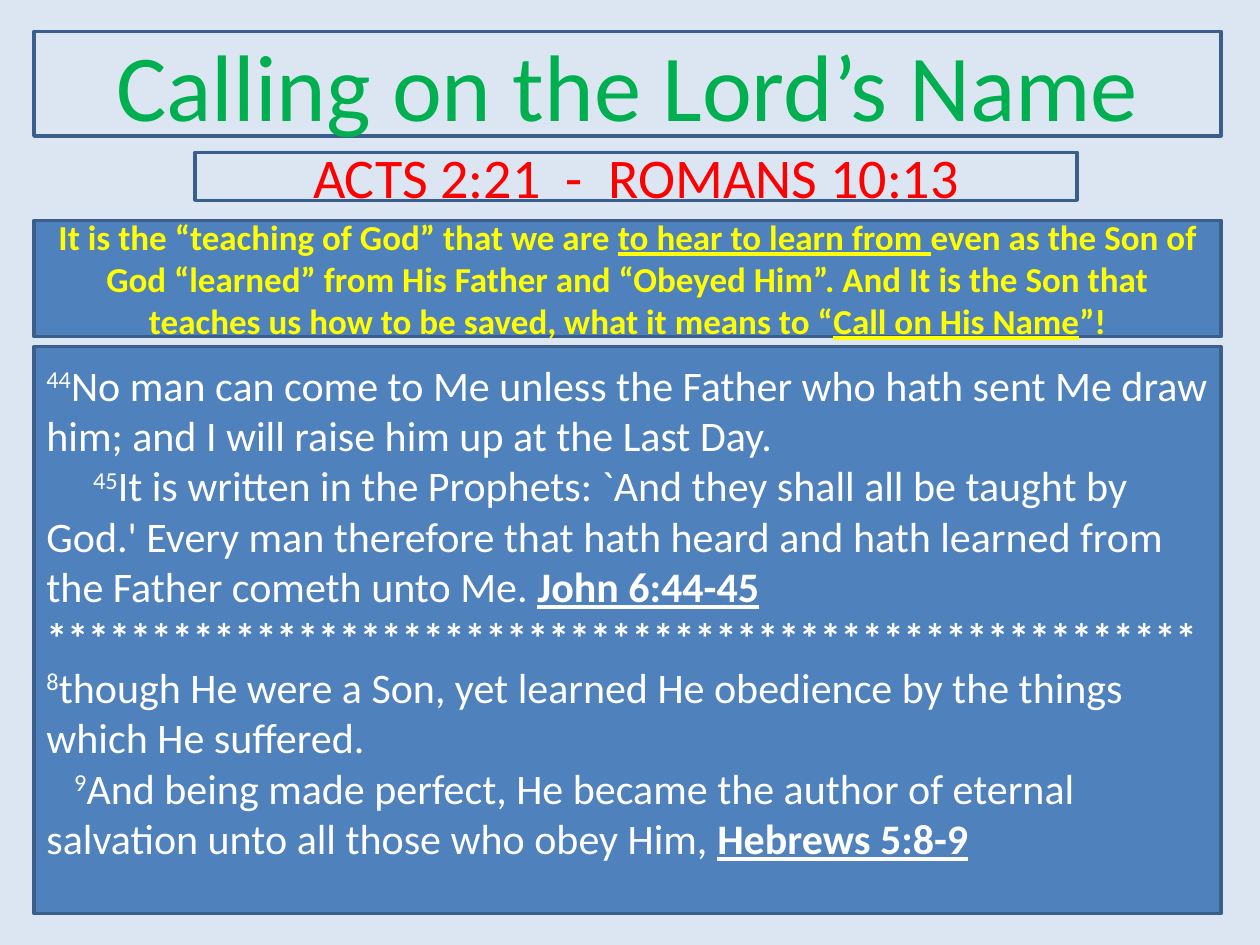
from pptx import Presentation
from pptx.dml.color import RGBColor
from pptx.enum.shapes import MSO_SHAPE
from pptx.enum.text import MSO_ANCHOR, PP_ALIGN
from pptx.util import Inches, Pt

RECTANGLE = MSO_SHAPE.RECTANGLE
TOP, MIDDLE = MSO_ANCHOR.TOP, MSO_ANCHOR.MIDDLE
LEFT, CENTER = PP_ALIGN.LEFT, PP_ALIGN.CENTER

PALE_BLUE = RGBColor(0xDC, 0xE6, 0xF2)
BLUE = RGBColor(0x4F, 0x81, 0xBD)
DARK_BLUE = RGBColor(0x3A, 0x5F, 0x8C)
GREEN = RGBColor(0x00, 0xB0, 0x50)
RED = RGBColor(0xFF, 0x00, 0x00)
YELLOW = RGBColor(0xFF, 0xFF, 0x00)
WHITE = RGBColor(0xFF, 0xFF, 0xFF)

FONT = "Calibri"
MARGIN, FULL_WIDTH = 0.27, 9.42

PLAIN, BOLD, UNDERLINED, REFERENCE, VERSE = "", "b", "u", "bu", "^"

TEACHING = [
    ("It is the “teaching of God” that we are ", BOLD),
    ("to hear to learn from ", REFERENCE),
    ("even as the Son of God “learned” from His Father and “Obeyed Him”. "
     "And It is the Son that teaches us how to be saved, what it means to “", BOLD),
    ("Call on His Name", REFERENCE),
    ("”!", BOLD),
]

# First-line indent in inches, then the spans of the paragraph
SCRIPTURE = [
    (0, [("44", VERSE),
         ("No man can come to Me unless the Father who hath sent Me draw him; "
          "and I will raise him up at the Last Day.", PLAIN)]),
    (0.37, [("45", VERSE),
            ("It is written in the Prophets: `And they shall all be taught by God.' "
             "Every man therefore that hath heard and hath learned from the Father "
             "cometh unto Me. ", PLAIN),
            ("John 6:44-45", REFERENCE)]),
    (0, [("*" * 55, BOLD)]),
    (0, [("8", VERSE),
         ("though He were a Son, yet learned He obedience by the things "
          "which He suffered.", PLAIN)]),
    (0.22, [("9", VERSE),
            ("And being made perfect, He became the author of eternal salvation "
             "unto all those who obey Him, ", PLAIN),
            ("Hebrews 5:8-9", REFERENCE)]),
]


def add_box(page, left, top, width, height, fill=None, anchor=MIDDLE):
    box = page.shapes.add_shape(
        RECTANGLE, Inches(left), Inches(top), Inches(width), Inches(height))
    box.shadow.inherit = False
    if fill is None:
        box.fill.background()
    else:
        box.fill.solid()
        box.fill.fore_color.rgb = fill
    box.line.color.rgb = DARK_BLUE
    box.line.width = Pt(2)
    box.text_frame.word_wrap = True
    box.text_frame.vertical_anchor = anchor
    return box


def write_spans(para, spans, size, color, align=CENTER):
    """Fill a paragraph with (text, style) pairs."""
    para.alignment = align
    for text, style in spans:
        span = para.add_run()
        span.text = text
        font = span.font
        font.name, font.size = FONT, Pt(size)
        font.color.rgb = color
        font.bold = BOLD in style
        font.underline = UNDERLINED in style
        if style == VERSE:
            font._element.set("baseline", "30000")


def write_scripture(box):
    frame = box.text_frame
    frame.margin_top = Inches(0.1)
    for number, (indent, spans) in enumerate(SCRIPTURE):
        para = frame.add_paragraph() if number else frame.paragraphs[0]
        write_spans(para, spans, 24, WHITE, LEFT)
        if indent:
            para._p.get_or_add_pPr().set("indent", str(Inches(indent)))


def main():
    deck = Presentation()
    deck.slide_width, deck.slide_height = Inches(10), Inches(7.5)
    page = deck.slides.add_slide(deck.slide_layouts[6])
    page.background.fill.solid()
    page.background.fill.fore_color.rgb = PALE_BLUE

    title = add_box(page, MARGIN, 0.25, FULL_WIDTH, 0.83)
    write_spans(title.text_frame.paragraphs[0],
                [("Calling on the Lord’s Name", PLAIN)], 54, GREEN)

    passages = add_box(page, 1.55, 1.21, 7, 0.38)
    write_spans(passages.text_frame.paragraphs[0],
                [("ACTS 2:21  -  ROMANS 10:13", PLAIN)], 32, RED)

    scripture = add_box(page, MARGIN, 2.75, FULL_WIDTH, 4.5, BLUE, TOP)
    write_scripture(scripture)

    teaching = add_box(page, MARGIN, 1.75, FULL_WIDTH, 0.92, BLUE)
    write_spans(teaching.text_frame.paragraphs[0], TEACHING, 20, YELLOW)

    deck.save("out.pptx")


if __name__ == "__main__":
    main()
